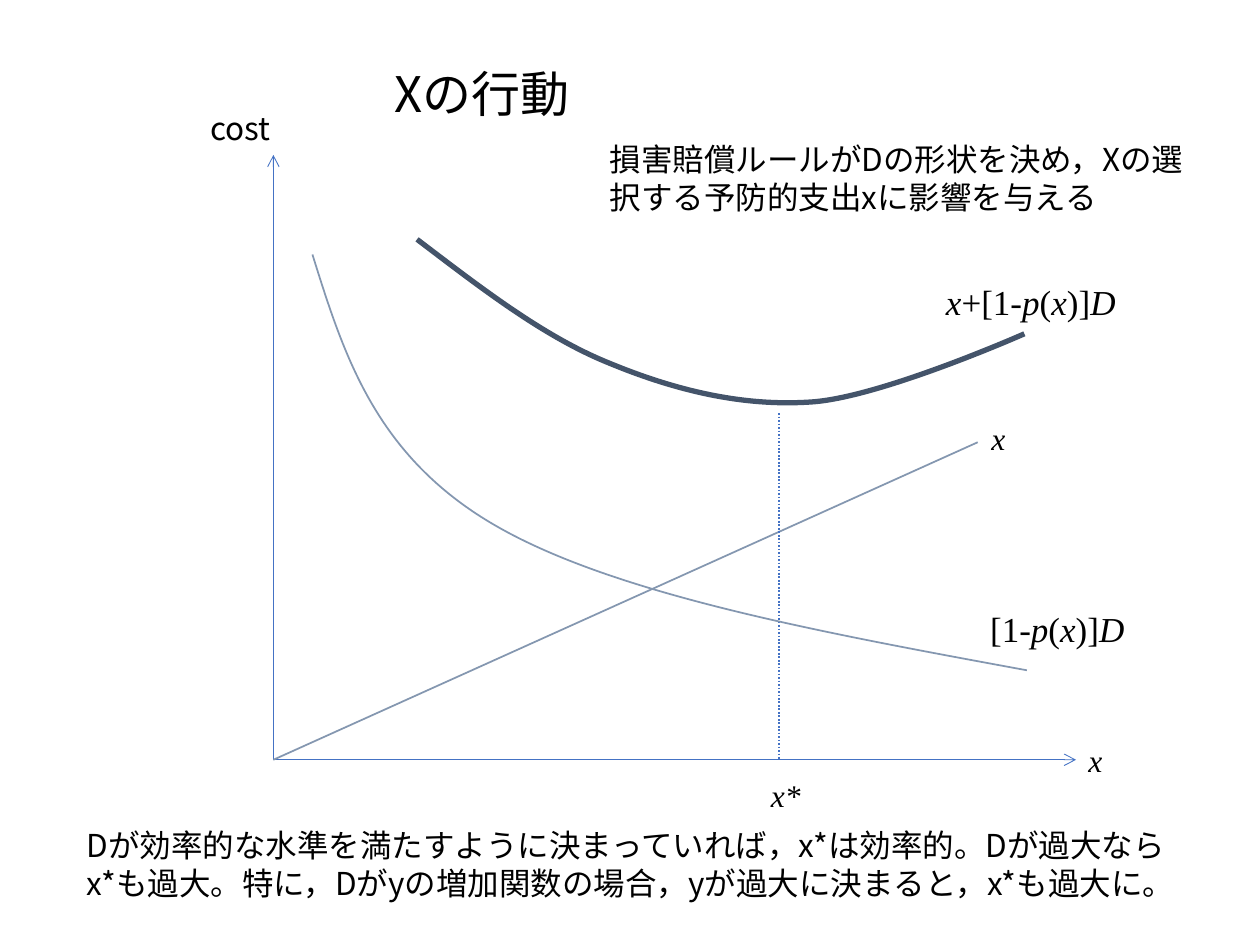
import itertools
from dataclasses import dataclass

import pptx
import pptx.dml.color
import pptx.enum.dml
import pptx.enum.shapes
import pptx.enum.text
import pptx.oxml.ns
import pptx.util

Inches = pptx.util.Inches
qn = pptx.oxml.ns.qn


@dataclass(frozen=True)
class Theme:
    """Colours, fonts, type sizes and line widths of the deck."""
    ink: str = "000000"
    axis: str = "4472C4"
    curve: str = "8497B0"
    total: str = "44546A"
    sans: str = "Noto Sans CJK JP"
    serif: str = "Times New Roman"
    title: int = 28
    formula: int = 20
    body: int = 18
    hairline: float = 0.5
    thin: float = 1
    thick: float = 3


THEME = Theme()


def apply_format(target, values):
    """Set each named attribute on the target."""
    for name, value in values.items():
        setattr(target, name, value)


def append_element(parent, tag, **attributes):
    """Append an XML element to its parent."""
    parent.append(parent.makeelement(qn(tag), attributes))


def add_span(para, text, size, font, italic=False):
    """Append one formatted run, with its East Asian font, to a paragraph."""
    span = para.add_run()
    span.text = text
    apply_format(span.font, {"size": pptx.util.Pt(size), "name": font, "italic": italic})
    span.font.color.rgb = pptx.dml.color.RGBColor.from_string(THEME.ink)
    append_element(span._r.get_or_add_rPr(), "a:ea", typeface=font)


def prepare_text(shape, box):
    """Place a text shape in its box and return its left-aligned paragraph."""
    places = map(Inches, box)
    apply_format(shape, dict(zip(("left", "top", "width", "height"), places)))
    apply_format(shape.text_frame, {
        "word_wrap": True,
        "auto_size": pptx.enum.text.MSO_AUTO_SIZE.SHAPE_TO_FIT_TEXT,
        "vertical_anchor": pptx.enum.text.MSO_ANCHOR.TOP,
    })
    para = shape.text_frame.paragraphs[0]
    para.alignment = pptx.enum.text.PP_ALIGN.LEFT
    return para


def add_title(page, box, text):
    """Move and fill the title placeholder."""
    add_span(prepare_text(page.shapes.title, box), text, THEME.title, THEME.sans)


def add_note(page, box, text):
    """Add plain body text in a box."""
    shape = page.shapes.add_textbox(0, 0, 0, 0)
    add_span(prepare_text(shape, box), text, THEME.body, THEME.sans)


def add_formula(page, box, text, size=THEME.body):
    """Add a formula whose variables are italic."""
    para = prepare_text(page.shapes.add_textbox(0, 0, 0, 0), box)
    for italic, letters in itertools.groupby(text, lambda letter: letter in "xpD*"):
        add_span(para, "".join(letters), size, THEME.serif, italic)


def format_line(line, color, width):
    """Give a line its colour and width."""
    line.color.rgb = pptx.dml.color.RGBColor.from_string(color)
    line.width = pptx.util.Pt(width)


def add_line(page, start, end, color, width, dash=None, arrow=False):
    """Draw a straight line, optionally dashed or with an arrowhead."""
    connector = page.shapes.add_connector(
        pptx.enum.shapes.MSO_CONNECTOR.STRAIGHT, *map(Inches, (*start, *end)))
    format_line(connector.line, color, width)
    if dash:
        connector.line.dash_style = dash
    properties = connector._element.spPr
    if arrow:
        append_element(properties.find(qn("a:ln")), "a:tailEnd", type="arrow")
    append_element(properties, "a:effectLst")


def add_curve(page, points, color, width):
    """Draw cubic curves through a start point and triples of control points."""
    start, *rest = [tuple(map(Inches, point)) for point in points]
    builder = page.shapes.build_freeform(*start)
    builder.add_line_segments(rest, close=False)
    shape = builder.convert_to_shape()
    segments = list(shape._element.iter(qn("a:lnTo")))
    for index in range(0, len(segments), 3):
        curve = segments[index].makeelement(qn("a:cubicBezTo"), {})
        segments[index].addprevious(curve)
        for segment in segments[index:index + 3]:
            curve.append(segment[0])
            segment.getparent().remove(segment)
    shape.shadow.inherit = False
    shape.fill.background()
    format_line(shape.line, color, width)


def add_cost_diagram(page, box):
    """Draw the axes, cost curves, optimum and labels inside the box."""
    left, top, width, height = box
    right, bottom = left + width, top + height
    origin = (left, bottom)

    def at(x, y):
        """Turn an offset from the upper left corner into a slide position."""
        return left + x, top + y

    for end in ((right, bottom), (left, top)):
        add_line(page, origin, end, THEME.axis, THEME.hairline, arrow=True)
    add_line(page, origin, at(5.59, 2.28), THEME.curve, THEME.thin)
    add_line(page, at(4.01, 2.05), at(4.01, height), THEME.axis, THEME.thin,
             dash=pptx.enum.dml.MSO_LINE.ROUND_DOT)

    damage = [(0.31, 0.79), (0.56, 1.59), (0.81, 2.39), (1.76, 2.94),
              (2.71, 3.49), (4.35, 3.79), (5.98, 4.09)]
    total = [(1.14, 0.67), (1.64, 1.05), (2.14, 1.44), (2.66, 1.65), (3.19, 1.87),
             (3.73, 2), (4.28, 1.96), (4.83, 1.92), (5.96, 1.42), (5.96, 1.42)]
    for points, color, weight in ((damage, THEME.curve, THEME.thin),
                                  (total, THEME.total, THEME.thick)):
        add_curve(page, [at(*point) for point in points], color, weight)

    add_note(page, (*at(-0.6, -0.41), 1.18, 0.4), "cost")
    for text, x, y in (("x", 5.6, 2.05), ("x", width, 4.6), ("x*", 3.85, 4.88)):
        add_formula(page, (*at(x, y), 0.47, 0.4), text)
    for text, x, y, span in (("[1-p(x)]D", 5.59, 3.54, 1.5),
                             ("x+[1-p(x)]D", 5.24, 0.95, 1.77)):
        add_formula(page, (*at(x, y), span, 0.44), text, THEME.formula)


def main():
    """Build the slide and save the deck."""
    deck = pptx.Presentation()
    apply_format(deck, {"slide_width": Inches(10), "slide_height": Inches(7.5)})
    page = deck.slides.add_slide(deck.slide_layouts.get_by_name("Title Only"))
    add_title(page, (3.03, 0.45, 1.93, 0.57), "Xの行動")
    add_cost_diagram(page, (2.17, 1.23, 6.37, 4.8))
    add_note(page, (4.74, 1.06, 4.82, 0.71),
             "損害賠償ルールがDの形状を決め，Xの選択する予防的支出xに影響を与える")
    add_note(page, (0.59, 6.51, 8.98, 0.71),
             "Dが効率的な水準を満たすように決まっていれば，x*は効率的。Dが過大ならx*も過大。"
             "特に，Dがyの増加関数の場合，yが過大に決まると，x*も過大に。")
    deck.save("out.pptx")


if __name__ == "__main__":
    main()
